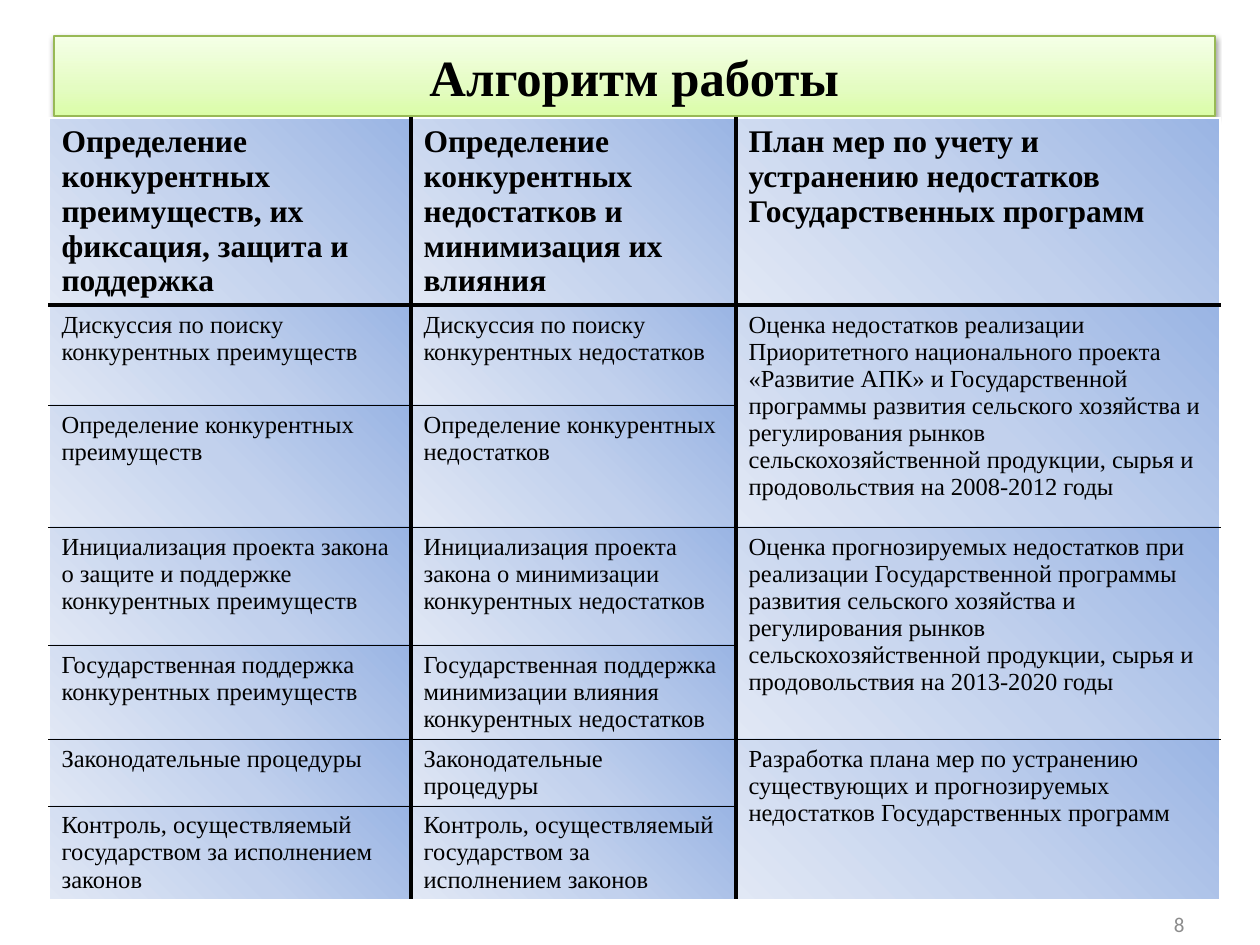
from dataclasses import dataclass

from pptx import Presentation
from pptx.dml.color import RGBColor
from pptx.enum.text import MSO_ANCHOR, MSO_AUTO_SIZE, PP_ALIGN
from pptx.oxml import parse_xml
from pptx.oxml.ns import nsdecls, qn
from pptx.util import Emu, Pt

PX = 914400 / 126


@dataclass(frozen=True)
class Theme:
    serif: str = "Times New Roman"
    sans: str = "Calibri"
    title_size: int = 29
    header_size: int = 18
    body_size: int = 14
    number_size: int = 12
    ink: str = "000000"
    muted: str = "8C8C8C"
    title_line: str = "98B955"
    edge: tuple = ("FFFFFF", 1)
    thick: tuple = ("000000", 2.25)
    thin: tuple = ("000000", 0.25)
    title_stops: tuple = ((0, "DAFDA7"), (35, "E4FCC2"), (100, "F5FFE7"))
    cell_stops: tuple = ((0, "9AB5E4"), (50, "C2D1ED"), (100, "E1E8F5"))


THEME = Theme()
UPWARD = '<a:lin ang="16200000" scaled="0"/>'
FROM_TOP_RIGHT = '<a:path path="circle"><a:fillToRect l="100000" b="100000"/></a:path>'

COLUMN_WIDTHS = (362, 325, 484)
ROW_HEIGHTS = (187, 100, 122, 118, 94, 66, 94)
ROWS = (
    ("Определение конкурентных преимуществ, их фиксация, защита и поддержка",
     "Определение конкурентных недостатков и минимизация их влияния",
     "План мер по учету и устранению недостатков Государственных программ"),
    ("Дискуссия по поиску конкурентных преимуществ",
     "Дискуссия по поиску конкурентных недостатков",
     "Оценка недостатков реализации Приоритетного национального проекта "
     "«Развитие АПК» и Государственной программы развития сельского хозяйства "
     "и регулирования рынков сельскохозяйственной продукции, сырья и "
     "продовольствия на 2008-2012 годы"),
    ("Определение конкурентных преимуществ",
     "Определение конкурентных недостатков", None),
    ("Инициализация проекта закона о защите и поддержке конкурентных преимуществ",
     "Инициализация проекта закона о минимизации конкурентных недостатков",
     "Оценка прогнозируемых недостатков при реализации Государственной "
     "программы развития сельского хозяйства и регулирования рынков "
     "сельскохозяйственной продукции, сырья и продовольствия на 2013-2020 годы"),
    ("Государственная поддержка конкурентных преимуществ",
     "Государственная поддержка минимизации влияния конкурентных недостатков", None),
    ("Законодательные процедуры", "Законодательные процедуры",
     "Разработка плана мер по устранению существующих и прогнозируемых "
     "недостатков Государственных программ"),
    ("Контроль, осуществляемый государством за исполнением законов",
     "Контроль, осуществляемый государством за исполнением законов", None),
)


def px(count):
    return Emu(round(count * PX))


def write(frame, text, *, size, font=THEME.serif, color=THEME.ink, bold=False,
          align=PP_ALIGN.LEFT):
    para = frame.paragraphs[0]
    para.alignment = align
    span = para.add_run()
    span.text = text
    span.font.name = font
    span.font.size = Pt(size)
    span.font.bold = bold
    span.font.color.rgb = RGBColor.from_string(color)


def fill_gradient(fill, properties, stops, direction):
    """Replace the two default stops, which python-pptx cannot add to."""
    fill.gradient()
    marks = "".join(
        f'<a:gs pos="{position * 1000}"><a:srgbClr val="{color}"/></a:gs>'
        for position, color in stops)
    gradient = parse_xml(
        f'<a:gradFill {nsdecls("a")} rotWithShape="1">'
        f"<a:gsLst>{marks}</a:gsLst>{direction}</a:gradFill>")
    properties.replace(properties.find(qn("a:gradFill")), gradient)


def add_title(slide, text, left, top, width, height):
    title = slide.shapes.title
    title.left, title.top = px(left), px(top)
    title.width, title.height = px(width), px(height)
    properties = title.element.spPr
    fill_gradient(title.fill, properties, THEME.title_stops, UPWARD)
    title.line.color.rgb = RGBColor.from_string(THEME.title_line)
    title.line.width = Pt(0.75)
    title.shadow.inherit = False
    properties.find(qn("a:effectLst")).append(parse_xml(
        f'<a:outerShdw {nsdecls("a")} blurRad="{Pt(3.1)}" dist="{Pt(1.6)}" '
        'dir="5400000" rotWithShape="0"><a:srgbClr val="000000">'
        '<a:alpha val="38000"/></a:srgbClr></a:outerShdw>'))
    frame = title.text_frame
    frame.auto_size = MSO_AUTO_SIZE.NONE
    frame.vertical_anchor = MSO_ANCHOR.MIDDLE
    write(frame, text, size=THEME.title_size, bold=True, align=PP_ALIGN.CENTER)


def horizontal_rule(index):
    """Border above the row with this index."""
    if index in (0, len(ROWS)):
        return THEME.edge
    return THEME.thick if index == 1 else THEME.thin


def vertical_rule(index):
    """Border left of the column with this index."""
    return THEME.edge if index in (0, len(COLUMN_WIDTHS)) else THEME.thick


def set_borders(properties, borders):
    for position, (side, (color, width)) in enumerate(borders.items()):
        properties.insert(position, parse_xml(
            f'<a:{side} {nsdecls("a")} w="{Pt(width)}"><a:solidFill>'
            f'<a:srgbClr val="{color}"/></a:solidFill></a:{side}>'))


def format_cell(cell, row, column):
    properties = cell._tc.get_or_add_tcPr()
    fill_gradient(cell.fill, properties, THEME.cell_stops, FROM_TOP_RIGHT)
    height = cell.span_height if cell.is_merge_origin else 1
    borders = {"lnL": vertical_rule(column), "lnR": vertical_rule(column + 1)}
    if not cell.is_spanned:
        borders["lnT"] = horizontal_rule(row)
    borders["lnB"] = horizontal_rule(row + height)
    set_borders(properties, borders)


def add_steps_table(slide, left, top):
    table = slide.shapes.add_table(
        len(ROWS), len(COLUMN_WIDTHS), px(left), px(top),
        px(sum(COLUMN_WIDTHS)), px(sum(ROW_HEIGHTS))).table
    table.horz_banding = False
    for column, width in zip(table.columns, COLUMN_WIDTHS):
        column.width = px(width)
    for row, height in zip(table.rows, ROW_HEIGHTS):
        row.height = px(height)
    for row, texts in enumerate(ROWS):
        for column, text in enumerate(texts):
            if text is None:
                table.cell(row - 1, column).merge(table.cell(row, column))
    for row, texts in enumerate(ROWS):
        for column, text in enumerate(texts):
            cell = table.cell(row, column)
            format_cell(cell, row, column)
            if text:
                header = row == 0
                write(cell.text_frame, text, bold=header,
                      size=THEME.header_size if header else THEME.body_size)


def add_page_number(slide, text, left, top, width, height):
    box = slide.shapes.add_textbox(px(left), px(top), px(width), px(height))
    frame = box.text_frame
    frame.word_wrap = True
    frame.vertical_anchor = MSO_ANCHOR.MIDDLE
    write(frame, text, size=THEME.number_size, font=THEME.sans,
          color=THEME.muted, align=PP_ALIGN.RIGHT)


def main():
    deck = Presentation()
    deck.slide_width, deck.slide_height = px(1260), px(945)
    slide = deck.slides.add_slide(deck.slide_layouts[5])
    add_title(slide, "Алгоритм работы", 54, 36, 1161, 80)
    add_steps_table(slide, 49, 118)
    add_page_number(slide, "8", 903, 899, 294, 50)
    deck.save("out.pptx")


if __name__ == "__main__":
    main()
